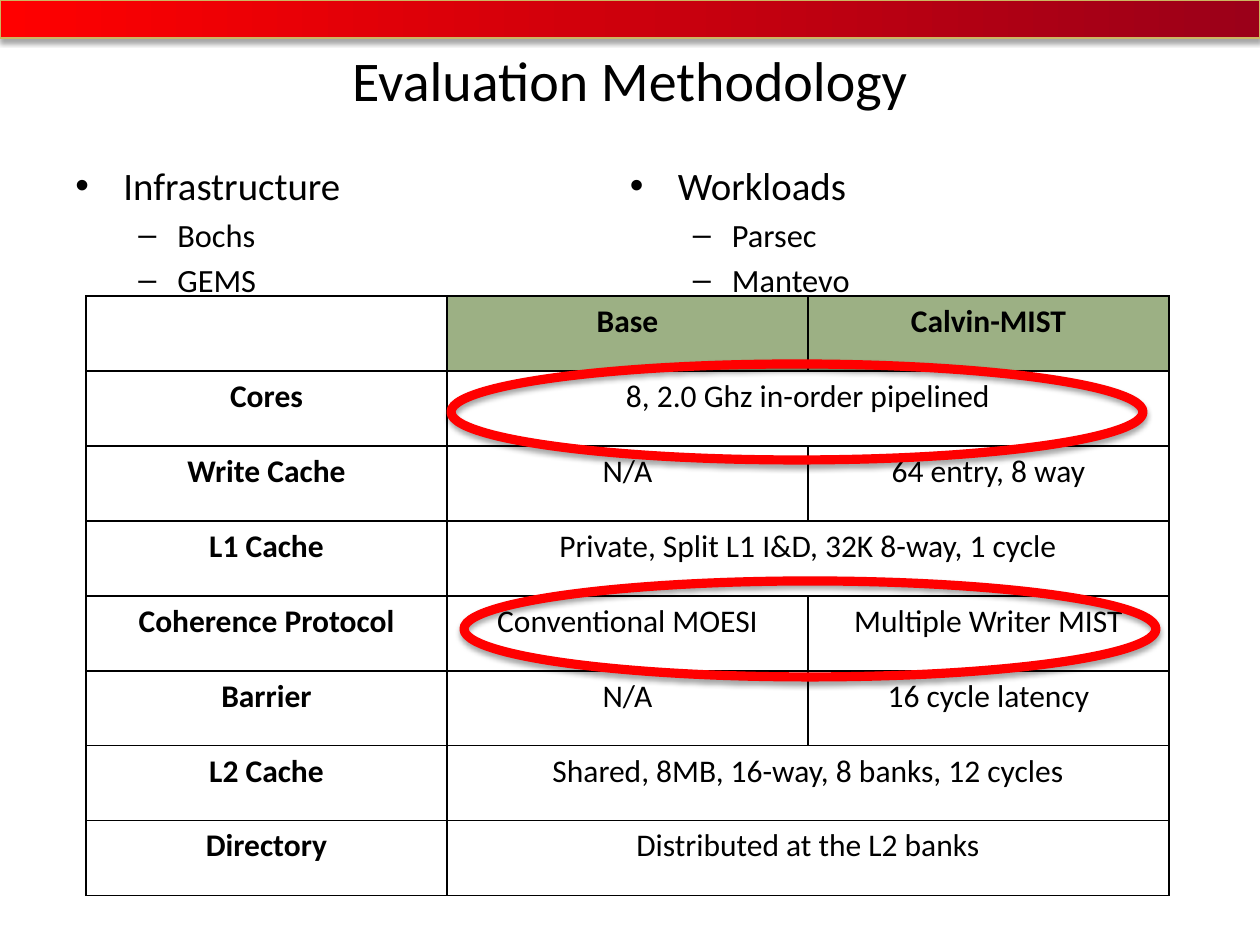
"""Build the Evaluation Methodology slide with its system configuration table."""
from dataclasses import dataclass

from lxml import etree
from pptx import Presentation
from pptx.dml.color import RGBColor
from pptx.enum.shapes import MSO_SHAPE
from pptx.enum.text import MSO_ANCHOR, PP_ALIGN
from pptx.oxml.ns import qn
from pptx.util import Emu, Pt

RECTANGLE, ELLIPSE = MSO_SHAPE.RECTANGLE, MSO_SHAPE.OVAL
CENTER, LEFT = PP_ALIGN.CENTER, PP_ALIGN.LEFT
MIDDLE = MSO_ANCHOR.MIDDLE
TITLE_ONLY = 5
PX = 914400 / 126

TITLE = "Evaluation Methodology"
TOPICS = [
    ("Infrastructure", ["Bochs", "GEMS"]),
    ("Workloads", ["Parsec", "Mantevo"]),
]
HEADINGS = ["", "Base", "Calvin-MIST"]
SETTINGS = [
    ("Cores", "8, 2.0 Ghz in-order pipelined"),
    ("Write Cache", "N/A", "64 entry, 8 way"),
    ("L1 Cache", "Private, Split L1 I&D, 32K 8-way, 1 cycle"),
    ("Coherence Protocol", "Conventional MOESI", "Multiple Writer MIST"),
    ("Barrier", "N/A", "16 cycle latency"),
    ("L2 Cache", "Shared, 8MB, 16-way, 8 banks, 12 cycles"),
    ("Directory", "Distributed at the L2 banks"),
]

BANNER = (0, 0, 1260, 38)
TITLE_AREA = (63, 38, 1134, 83)
TOPIC_AREA = (63, 152, 1134, 152)
TABLE_LEFT, TABLE_TOP = 86, 296
COLUMN_WIDTH, ROW_HEIGHT = 361, 75
HIGHLIGHTS = [(451, 364, 692, 96), (464, 581, 692, 96)]


@dataclass(frozen=True)
class Theme:
    font: str = "Calibri"
    text: str = "000000"
    heading_fill: str = "9CB084"
    banner: tuple = ("FF0000", "9B0019")
    banner_line: str = "CCB661"
    highlight: str = "FF0000"
    title_size: float = 32
    topic_size: float = 22.2
    item_size: float = 18.5
    table_size: float = 18


THEME = Theme()
LEVELS = [("•", 48, 48, THEME.topic_size), ("–", 102, 39, THEME.item_size)]


def px(value):
    return Emu(round(value * PX))


def area(bounds):
    return [px(value) for value in bounds]


def color(value):
    return RGBColor.from_string(value)


def write(para, text, size, align=CENTER, bold=False):
    para.alignment = align
    span = para.add_run()
    span.text = text
    span.font.name = THEME.font
    span.font.size = Pt(size)
    span.font.bold = bold
    span.font.color.rgb = color(THEME.text)


def add_shadowed(page, kind, bounds, line, weight):
    shape = page.shapes.add_shape(kind, *area(bounds))
    shape.shadow.inherit = False
    shape.line.color.rgb = color(line)
    shape.line.width = Pt(weight)
    effects = shape.element.spPr.find(qn("a:effectLst"))
    shadow = etree.SubElement(
        effects, qn("a:outerShdw"), blurRad=str(Pt(3.1)), dist=str(Pt(1.8)),
        dir="5400000", rotWithShape="0")
    shade = etree.SubElement(shadow, qn("a:srgbClr"), val="000000")
    etree.SubElement(shade, qn("a:alpha"), val="35000")
    return shape


def add_banner(page):
    banner = add_shadowed(page, RECTANGLE, BANNER, THEME.banner_line, 0.75)
    banner.fill.gradient()
    banner.fill.gradient_angle = 0
    for stop, value in zip(banner.fill.gradient_stops, THEME.banner):
        stop.color.rgb = color(value)


def add_title(page):
    title = page.shapes.title
    title.left, title.top, title.width, title.height = area(TITLE_AREA)
    title.text_frame.vertical_anchor = MIDDLE
    write(title.text_frame.paragraphs[0], TITLE, THEME.title_size)


def add_topics(page):
    frame = page.shapes.add_textbox(*area(TOPIC_AREA)).text_frame
    frame.word_wrap = True
    frame.margin_top, frame.margin_bottom = px(10), 0
    body = frame._txBody.bodyPr
    body.set("numCol", str(len(TOPICS)))
    body.set("spcCol", "0")
    lines = [(level, text) for topic, items in TOPICS
             for level, text in [(0, topic)] + [(1, item) for item in items]]
    for index, (level, text) in enumerate(lines):
        para = frame.add_paragraph() if index else frame.paragraphs[0]
        bullet, margin, hang, size = LEVELS[level]
        properties = para._p.get_or_add_pPr()
        properties.set("marL", str(px(margin)))
        properties.set("indent", str(px(-hang)))
        etree.SubElement(properties, qn("a:buFont"), typeface="Arial")
        etree.SubElement(properties, qn("a:buChar"), char=bullet)
        para.level = level
        para.space_before = Pt(3.5 * level)
        write(para, text, size, LEFT)


def add_borders(cell):
    properties = cell._tc.get_or_add_tcPr()
    for side in ("lnL", "lnR", "lnT", "lnB"):
        border = etree.SubElement(properties, qn(f"a:{side}"), w=str(Pt(1)))
        fill = etree.SubElement(border, qn("a:solidFill"))
        etree.SubElement(fill, qn("a:srgbClr"), val=THEME.text)


def add_settings(page):
    rows = [HEADINGS, *SETTINGS]
    count = len(HEADINGS)
    bounds = (TABLE_LEFT, TABLE_TOP, COLUMN_WIDTH * count, ROW_HEIGHT * len(rows))
    table = page.shapes.add_table(len(rows), count, *area(bounds)).table
    table.first_row = table.horz_banding = False
    for column in table.columns:
        column.width = px(COLUMN_WIDTH)
    for row_index, values in enumerate(rows):
        table.rows[row_index].height = px(ROW_HEIGHT)
        for column_index in range(count):
            cell = table.cell(row_index, column_index)
            add_borders(cell)
            text = values[column_index] if column_index < len(values) else ""
            if row_index == 0 and text:
                cell.fill.solid()
                cell.fill.fore_color.rgb = color(THEME.heading_fill)
            else:
                cell.fill.background()
            if text:
                write(cell.text_frame.paragraphs[0], text, THEME.table_size,
                      bold=row_index == 0 or column_index == 0)
        if len(values) < count:
            table.cell(row_index, len(values) - 1).merge(
                table.cell(row_index, count - 1))


def main():
    deck = Presentation()
    deck.slide_width, deck.slide_height = px(1260), px(945)
    page = deck.slides.add_slide(deck.slide_layouts[TITLE_ONLY])
    add_banner(page)
    add_title(page)
    add_topics(page)
    add_settings(page)
    for bounds in HIGHLIGHTS:
        ring = add_shadowed(page, ELLIPSE, bounds, THEME.highlight, 5.25)
        ring.fill.background()
    deck.save("out.pptx")


if __name__ == "__main__":
    main()
